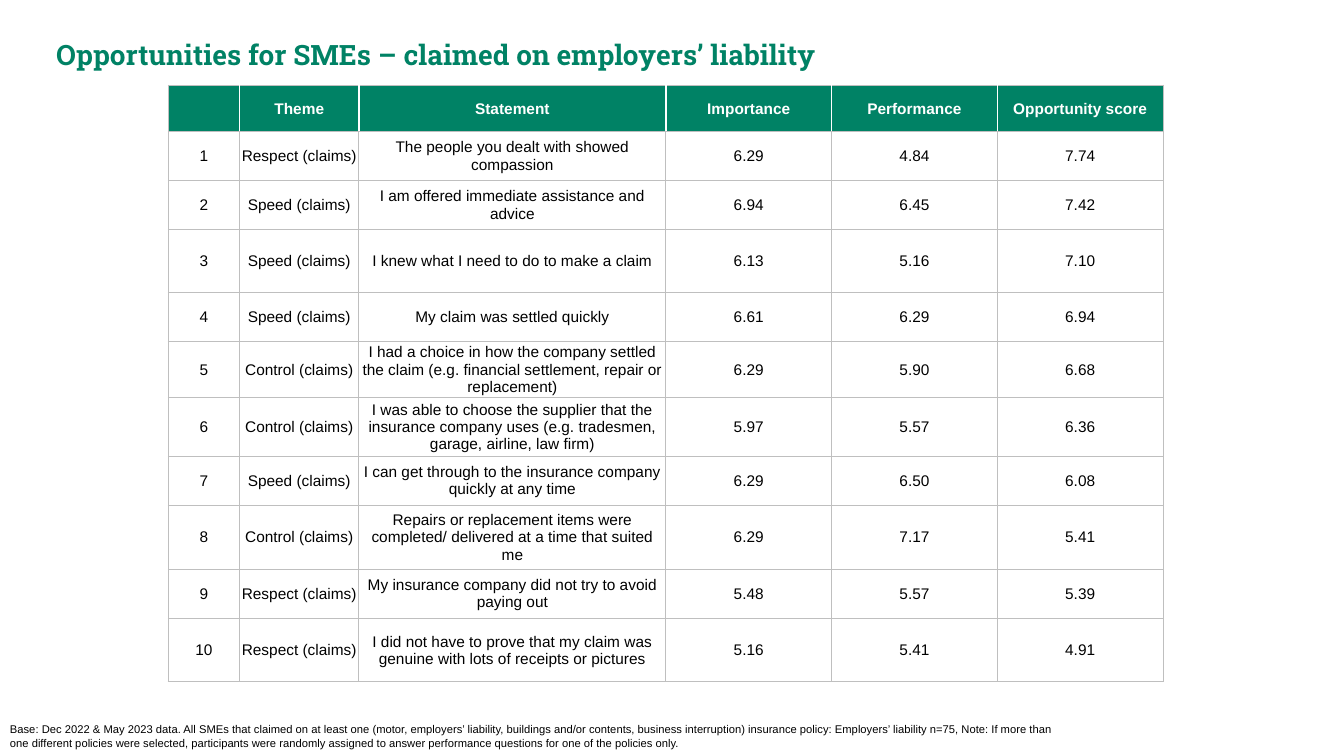
"""Build the slide on opportunities for SMEs that claimed on employers' liability."""
from dataclasses import dataclass
from typing import Any, NamedTuple

from lxml.etree import SubElement
from pptx import Presentation
from pptx.dml.color import RGBColor
from pptx.enum.text import MSO_ANCHOR, MSO_AUTO_SIZE, PP_ALIGN
from pptx.oxml.ns import qn
from pptx.util import Pt


@dataclass(frozen=True)
class Theme:
    green: str = "008265"
    white: str = "FFFFFF"
    black: str = "000000"
    grey: str = "BFBFBF"
    heading_font: str = "Roboto Slab"
    body_font: str = "Arial"
    heading_size: float = 20
    table_size: float = 11
    note_size: float = 8
    grid_width: float = 0.75
    header_rule_width: float = 1


class TextStyle(NamedTuple):
    font: str
    size: float
    colour: str
    bold: bool = False


class Caption(NamedTuple):
    text: str
    left: float
    top: float
    width: float
    height: float
    style: TextStyle
    frame_format: dict[str, Any]


class Opportunity(NamedTuple):
    height: float
    theme: str
    statement: str
    importance: str
    performance: str
    score: str


THEME = Theme()
HEADING = TextStyle(THEME.heading_font, THEME.heading_size, THEME.green, True)
HEADER = TextStyle(THEME.body_font, THEME.table_size, THEME.white, True)
BODY = TextStyle(THEME.body_font, THEME.table_size, THEME.black)
NOTE = TextStyle(THEME.body_font, THEME.note_size, THEME.black)

CAPTIONS = [
    Caption("Opportunities for SMEs – claimed on employers’ liability",
            33.1, 23, 884, 31.7, HEADING,
            {"word_wrap": True, "auto_size": MSO_AUTO_SIZE.SHAPE_TO_FIT_TEXT}),
    Caption("Base: Dec 2022 & May 2023 data. All SMEs that claimed on at least one "
            "(motor, employers’ liability, buildings and/or contents, business "
            "interruption) insurance policy: Employers’ liability n=75, Note: If more "
            "than one different policies were selected, participants were randomly "
            "assigned to answer performance questions for one of the policies only.",
            0, 512.6, 771.8, 27.4, NOTE, {"word_wrap": True}),
]

TABLE_LEFT, TABLE_TOP = 120.2, 61
COLUMN_WIDTHS = [51, 85.2, 219.3, 118.4, 118.4, 118.4]
HEADER_HEIGHT = 32.6
HEADINGS = ["", "Theme", "Statement", "Importance", "Performance", "Opportunity score"]
OPPORTUNITIES = [
    Opportunity(35.1, "Respect (claims)", "The people you dealt with showed compassion",
                "6.29", "4.84", "7.74"),
    Opportunity(35.1, "Speed (claims)", "I am offered immediate assistance and advice",
                "6.94", "6.45", "7.42"),
    Opportunity(44.9, "Speed (claims)", "I knew what I need to do to make a claim",
                "6.13", "5.16", "7.10"),
    Opportunity(35.1, "Speed (claims)", "My claim was settled quickly",
                "6.61", "6.29", "6.94"),
    Opportunity(40, "Control (claims)",
                "I had a choice in how the company settled the claim "
                "(e.g. financial settlement, repair or replacement)",
                "6.29", "5.90", "6.68"),
    Opportunity(42, "Control (claims)",
                "I was able to choose the supplier that the insurance company uses "
                "(e.g. tradesmen, garage, airline, law firm)",
                "5.97", "5.57", "6.36"),
    Opportunity(35.1, "Speed (claims)",
                "I can get through to the insurance company quickly at any time",
                "6.29", "6.50", "6.08"),
    Opportunity(45.6, "Control (claims)",
                "Repairs or replacement items were completed/ delivered at a time "
                "that suited me",
                "6.29", "7.17", "5.41"),
    Opportunity(35.1, "Respect (claims)",
                "My insurance company did not try to avoid paying out",
                "5.48", "5.57", "5.39"),
    Opportunity(45.6, "Respect (claims)",
                "I did not have to prove that my claim was genuine with lots of "
                "receipts or pictures",
                "5.16", "5.41", "4.91"),
]
CELL_FORMAT = {
    "margin_left": Pt(0.7), "margin_right": Pt(0.7),
    "margin_top": Pt(0.7), "margin_bottom": Pt(0),
    "vertical_anchor": MSO_ANCHOR.MIDDLE,
}
TABLE_FORMAT = {"first_row": False, "horz_banding": False}


def apply_format(target: Any, values: dict[str, Any]) -> None:
    """Set each named attribute on the target."""
    for name, value in values.items():
        setattr(target, name, value)


def style_paragraph(paragraph: Any, style: TextStyle) -> None:
    """Give a paragraph and its runs the font of a text style."""
    for part in (paragraph, *paragraph.runs):
        apply_format(part.font, {"name": style.font, "size": Pt(style.size),
                                 "bold": style.bold})
        part.font.color.rgb = RGBColor.from_string(style.colour)


def draw_caption(slide: Any, caption: Caption) -> None:
    """Draw one text box."""
    box = slide.shapes.add_textbox(Pt(caption.left), Pt(caption.top),
                                   Pt(caption.width), Pt(caption.height))
    apply_format(box.text_frame, caption.frame_format)
    box.text_frame.text = caption.text
    style_paragraph(box.text_frame.paragraphs[0], caption.style)


def draw_borders(cell: Any, is_header: bool, column: int) -> None:
    """Rule the four sides of a cell, with white rules between headings."""
    inner_sides = {"L": column > 0, "R": column < len(COLUMN_WIDTHS) - 1}
    properties = cell._tc.get_or_add_tcPr()
    for side in "LRTB":
        white = is_header and inner_sides.get(side, False)
        width = THEME.header_rule_width if white else THEME.grid_width
        line = SubElement(properties, qn(f"a:ln{side}"), w=str(int(Pt(width))))
        fill = SubElement(line, qn("a:solidFill"))
        SubElement(fill, qn("a:srgbClr"), val=THEME.white if white else THEME.grey)


def draw_cell(cell: Any, text: str, is_header: bool, column: int) -> None:
    """Fill, rule and write one table cell."""
    draw_borders(cell, is_header, column)
    if is_header:
        cell.fill.solid()
        cell.fill.fore_color.rgb = RGBColor.from_string(THEME.green)
    else:
        cell.fill.background()
    apply_format(cell, CELL_FORMAT)
    cell.text = text
    paragraph = cell.text_frame.paragraphs[0]
    paragraph.alignment = PP_ALIGN.CENTER
    style_paragraph(paragraph, HEADER if is_header else BODY)


def draw_opportunity_table(slide: Any) -> None:
    """Draw the ranked table of opportunities."""
    heights = [HEADER_HEIGHT, *(item.height for item in OPPORTUNITIES)]
    rows = [HEADINGS, *([str(rank), *item[1:]]
                        for rank, item in enumerate(OPPORTUNITIES, 1))]
    table = slide.shapes.add_table(
        len(rows), len(COLUMN_WIDTHS), Pt(TABLE_LEFT), Pt(TABLE_TOP),
        Pt(sum(COLUMN_WIDTHS)), Pt(sum(heights))).table
    apply_format(table, TABLE_FORMAT)
    for column, width in zip(table.columns, COLUMN_WIDTHS):
        column.width = Pt(width)
    for row_index, (texts, height) in enumerate(zip(rows, heights)):
        table.rows[row_index].height = Pt(height)
        for column_index, text in enumerate(texts):
            draw_cell(table.cell(row_index, column_index), text,
                      row_index == 0, column_index)


def main() -> None:
    """Build and save the presentation."""
    presentation = Presentation()
    apply_format(presentation, {"slide_width": Pt(960), "slide_height": Pt(540)})
    slide = presentation.slides.add_slide(presentation.slide_layouts[6])
    draw_opportunity_table(slide)
    for caption in CAPTIONS:
        draw_caption(slide, caption)
    presentation.save("out.pptx")


if __name__ == "__main__":
    main()
